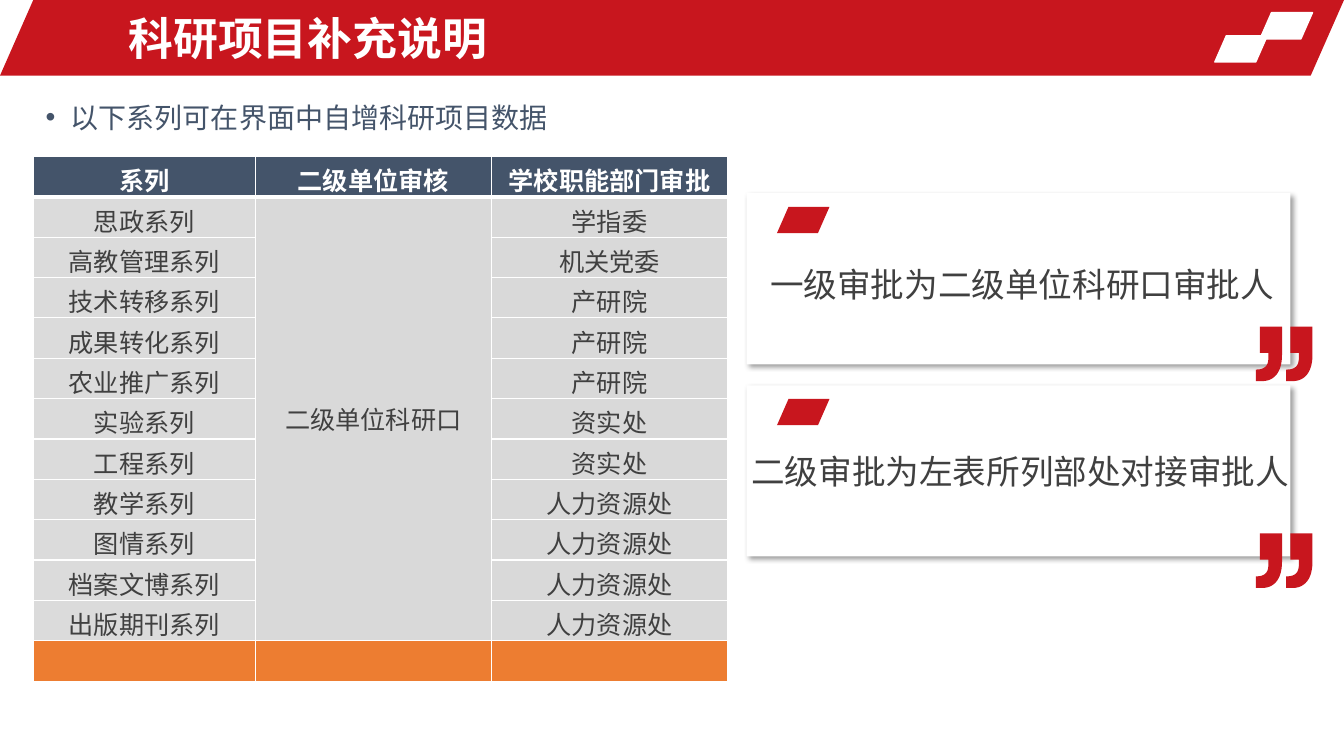
from lxml.etree import SubElement
from pptx import Presentation
from pptx.dml.color import RGBColor
from pptx.enum.shapes import MSO_SHAPE
from pptx.enum.text import MSO_ANCHOR, PP_ALIGN
from pptx.oxml import parse_xml
from pptx.oxml.ns import qn
from pptx.util import Pt

PX = 9525
RED = RGBColor(0xC8, 0x16, 0x1E)
WHITE = RGBColor(0xFF, 0xFF, 0xFF)
NAVY = RGBColor(0x44, 0x54, 0x6A)
DARK = RGBColor(0x40, 0x40, 0x40)
PALE = RGBColor(0xDB, 0xDB, 0xDB)
GRAY = RGBColor(0xD9, 0xD9, 0xD9)
ORANGE = RGBColor(0xED, 0x7D, 0x31)
NS = 'xmlns:a="http://schemas.openxmlformats.org/drawingml/2006/main"'
SHADE = (f'<a:outerShdw {NS} blurRad="50800" dist="38100" dir="2700000" algn="tl" rotWithShape="0">'
         '<a:srgbClr val="000000"><a:alpha val="40000"/></a:srgbClr></a:outerShdw>')

HEADS = ["系列", "二级单位审核", "学校职能部门审批"]
UNIT = "二级单位科研口"
ROWS = [
    ("思政系列", "学指委"),
    ("高教管理系列", "机关党委"),
    ("技术转移系列", "产研院"),
    ("成果转化系列", "产研院"),
    ("农业推广系列", "产研院"),
    ("实验系列", "资实处"),
    ("工程系列", "资实处"),
    ("教学系列", "人力资源处"),
    ("图情系列", "人力资源处"),
    ("档案文博系列", "人力资源处"),
    ("出版期刊系列", "人力资源处"),
]
NOTES = [
    (184, 311, (724, 235, 514, 60), "一级审批为二级单位科研口审批人"),
    (367, 508, (706, 413, 534, 60), "二级审批为左表所列部处对接审批人"),
]


def curve(start, one, two, end, steps=12):
    points = []
    for i in range(1, steps + 1):
        t = i / steps
        u = 1 - t
        points.append(tuple(u**3 * a + 3 * u * u * t * b + 3 * u * t * t * c + t**3 * d
                            for a, b, c, d in zip(start, one, two, end)))
    return points


MARK = [(25, 0), (25, 27), *curve((25, 27), (25, 43), (18, 52), (6, 52)),
        (0, 52), (0, 41), *curve((0, 41), (9, 41), (12, 37), (12, 30)),
        (12, 25), (4, 25), (4, 0)]


class Deck:
    font = "Arial"

    def __init__(self, wide, high):
        self.show = Presentation()
        self.show.slide_width, self.show.slide_height = wide * PX, high * PX
        self.slide = self.show.slides.add_slide(self.show.slide_layouts[6])
        self.shapes = self.slide.shapes

    def style(self, par, size, color, bold=False):
        form = {"name": self.font, "size": Pt(size), "bold": bold}
        for key, value in form.items():
            setattr(par.font, key, value)
        par.font.color.rgb = color

    def paint(self, shape, color, edge=None):
        shape.shadow.inherit = False
        shape.fill.solid()
        shape.fill.fore_color.rgb = color
        if edge is None:
            shape.line.fill.background()
        else:
            shape.line.color.rgb = edge
            shape.line.width = Pt(1)

    def slant(self, x, y, wide, high, color, edge=None):
        shape = self.shapes.add_shape(MSO_SHAPE.PARALLELOGRAM, x * PX, y * PX, wide * PX, high * PX)
        shape.adjustments[0] = 0.44
        self.paint(shape, color, edge)

    def card(self, x, y, wide, high):
        shape = self.shapes.add_shape(MSO_SHAPE.RECTANGLE, x * PX, y * PX, wide * PX, high * PX)
        self.paint(shape, WHITE)
        shape._element.spPr.find(qn("a:effectLst")).append(parse_xml(SHADE))

    def quote(self, x, y):
        build = None
        for shift in (0, 29):
            points = [((x + shift + a) * PX, (y + b) * PX) for a, b in MARK]
            if build is None:
                build = self.shapes.build_freeform(*points[0], scale=1.0)
            else:
                build.move_to(*points[0])
            build.add_line_segments(points[1:], close=True)
        self.paint(build.convert_to_shape(), RED)

    def text(self, x, y, wide, high, words, size, color, bold=False,
             space=None, anchor=MSO_ANCHOR.TOP, dot=False):
        box = self.shapes.add_textbox(x * PX, y * PX, wide * PX, high * PX)
        frame = box.text_frame
        frame.word_wrap = True
        frame.vertical_anchor = anchor
        par = frame.paragraphs[0]
        par.text = words
        par.line_spacing = space
        if dot:
            props = par._p.get_or_add_pPr()
            props.set("marL", str(24 * PX))
            props.set("indent", str(-24 * PX))
            SubElement(props, qn("a:buFont")).set("typeface", self.font)
            SubElement(props, qn("a:buChar")).set("char", "•")
        self.style(par, size, color, bold)

    def cell(self, cell, words, fill, color=DARK, bold=False, base=1):
        props = cell._tc.get_or_add_tcPr()
        for side in ("L", "R", "T", "B"):
            width = Pt(base if side == "B" else 1)
            props.append(parse_xml(f'<a:ln{side} {NS} w="{width}"><a:solidFill>'
                                   f'<a:srgbClr val="{WHITE}"/></a:solidFill></a:ln{side}>'))
        cell.fill.solid()
        cell.fill.fore_color.rgb = fill
        par = cell.text_frame.paragraphs[0]
        par.text = words
        par.alignment = PP_ALIGN.CENTER
        self.style(par, 18, color, bold)

    def table(self, x, y, cols, high):
        count = len(ROWS) + 2
        grid = self.shapes.add_table(count, len(cols), x * PX, y * PX,
                                     sum(cols) * PX, count * high * PX).table
        for col, wide in zip(grid.columns, cols):
            col.width = wide * PX
        for i, head in enumerate(HEADS):
            self.cell(grid.cell(0, i), head, NAVY, WHITE, True, 3)
            self.cell(grid.cell(count - 1, i), "", ORANGE)
        for i, (group, office) in enumerate(ROWS, 1):
            self.cell(grid.cell(i, 0), group, PALE)
            self.cell(grid.cell(i, 1), UNIT if i == 1 else "", GRAY)
            self.cell(grid.cell(i, 2), office, GRAY)
        grid.cell(1, 1).merge(grid.cell(len(ROWS), 1))
        grid.cell(1, 1).vertical_anchor = MSO_ANCHOR.MIDDLE


def main():
    deck = Deck(1280, 720)
    deck.slant(0, 0, 1280, 72, RED)
    for x, y in ((1200, 12), (1157, 34)):
        deck.slant(x, y, 50, 25, WHITE, WHITE)
    deck.text(113, 5, 743, 62, "科研项目补充说明", 32, WHITE, True, anchor=MSO_ANCHOR.MIDDLE)
    deck.text(34, 81, 1214, 500, "以下系列可在界面中自增科研项目数据", 20, NAVY, space=1.3, dot=True)
    deck.table(32, 149, (211, 225, 225), 38)
    for top, _, _, _ in NOTES:
        deck.card(711, top, 518, 163)
    for top, end, place, words in NOTES:
        deck.quote(1196, end)
        deck.slant(740, top + 13, 50, 25, RED)
        deck.text(*place, words, 24, DARK, space=1.3)
    deck.show.save("out.pptx")


if __name__ == "__main__":
    main()
